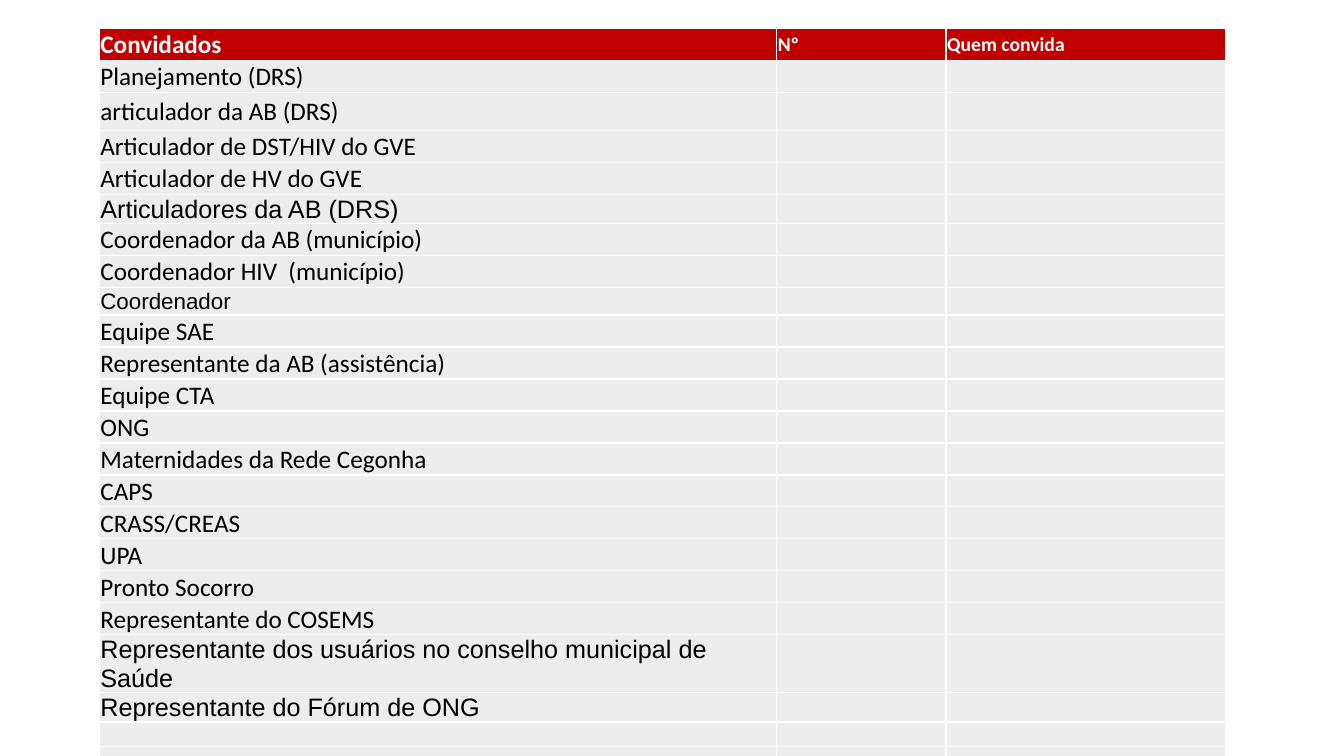
from dataclasses import dataclass

from lxml import etree
from pptx import Presentation
from pptx.dml.color import RGBColor
from pptx.enum import text
from pptx.oxml import ns
from pptx.util import Cm, Pt


@dataclass(frozen=True)
class Theme:
    header_fill: str = "C00000"
    body_fill: str = "EDEDED"
    border: str = "FFFFFF"
    header_text: str = "FFFFFF"
    body_text: str = "000000"
    main_font: str = "Calibri"
    alt_font: str = "Arial"
    main_size: int = 18
    alt_size: int = 16
    label_size: int = 14
    empty_size: int = 12


THEME = Theme()


@dataclass(frozen=True)
class Guest:
    name: str = ""
    height: float = 0.8
    font: str = THEME.main_font
    size: int = THEME.main_size


HEADERS = [("Convidados", THEME.main_size), ("Nº", THEME.label_size),
           ("Quem convida", THEME.label_size)]
COLUMN_WIDTHS = [17.07, 4.27, 7.04]
HEADER_HEIGHT = 0.8
GUESTS = [
    Guest("Planejamento (DRS)"),
    Guest("articulador da AB (DRS)", 0.95),
    Guest("Articulador de DST/HIV do GVE"),
    Guest("Articulador de HV do GVE"),
    Guest("Articuladores da AB (DRS)", 0.73, THEME.alt_font),
    Guest("Coordenador da AB (município)"),
    Guest("Coordenador HIV  (município)"),
    Guest("Coordenador", 0.69, THEME.alt_font, THEME.alt_size),
    Guest("Equipe SAE"),
    Guest("Representante da AB (assistência)"),
    Guest("Equipe CTA"),
    Guest("ONG"),
    Guest("Maternidades da Rede Cegonha"),
    Guest("CAPS"),
    Guest("CRASS/CREAS"),
    Guest("UPA"),
    Guest("Pronto Socorro"),
    Guest("Representante do COSEMS"),
    Guest("Representante dos usuários no conselho municipal de Saúde",
          1.45, THEME.alt_font),
    Guest("Representante do Fórum de ONG", 0.73, THEME.alt_font),
    Guest(height=0.61),
    Guest(height=0.61),
]


def add_borders(cell) -> None:
    tc_pr = cell._tc.get_or_add_tcPr()
    for side in ("a:lnL", "a:lnR", "a:lnT", "a:lnB"):
        ln = etree.SubElement(tc_pr, ns.qn(side), w=str(Pt(1)))
        fill = etree.SubElement(ln, ns.qn("a:solidFill"))
        etree.SubElement(fill, ns.qn("a:srgbClr"), val=THEME.border)


def fill_cell(cell, content: str, fill: str, color: str, size: int,
              font: str = THEME.main_font, bold: bool = False) -> None:
    cell.margin_left = cell.margin_right = cell.margin_top = Cm(0.03)
    cell.margin_bottom = 0
    cell.vertical_anchor = text.MSO_ANCHOR.MIDDLE
    add_borders(cell)
    cell.fill.solid()
    cell.fill.fore_color.rgb = RGBColor.from_string(fill)
    p = cell.text_frame.paragraphs[0]
    if not content:
        etree.SubElement(p._p, ns.qn("a:endParaRPr"),
                         sz=str(THEME.empty_size * 100))
        return
    p.text = content
    for r in p.runs:
        r.font.name = font
        r.font.size = Pt(size)
        r.font.bold = bold
        r.font.color.rgb = RGBColor.from_string(color)


def add_guest_table(s) -> None:
    heights = [HEADER_HEIGHT] + [guest.height for guest in GUESTS]
    table = s.shapes.add_table(
        len(heights), len(HEADERS), Cm(2.5), Cm(0.72),
        Cm(sum(COLUMN_WIDTHS)), Cm(sum(heights))).table
    for column, width in zip(table.columns, COLUMN_WIDTHS):
        column.width = Cm(width)
    for row, height in zip(table.rows, heights):
        row.height = Cm(height)
    for i, (label, size) in enumerate(HEADERS):
        fill_cell(table.cell(0, i), label, THEME.header_fill,
                  THEME.header_text, size, bold=True)
    for i, guest in enumerate(GUESTS, start=1):
        for j, content in enumerate((guest.name, "", "")):
            fill_cell(table.cell(i, j), content, THEME.body_fill,
                      THEME.body_text, guest.size, guest.font)


def main() -> None:
    prs = Presentation()
    prs.slide_width, prs.slide_height = Cm(33.87), Cm(19.05)
    s = prs.slides.add_slide(prs.slide_layouts[6])
    add_guest_table(s)
    prs.save("out.pptx")


if __name__ == "__main__":
    main()
